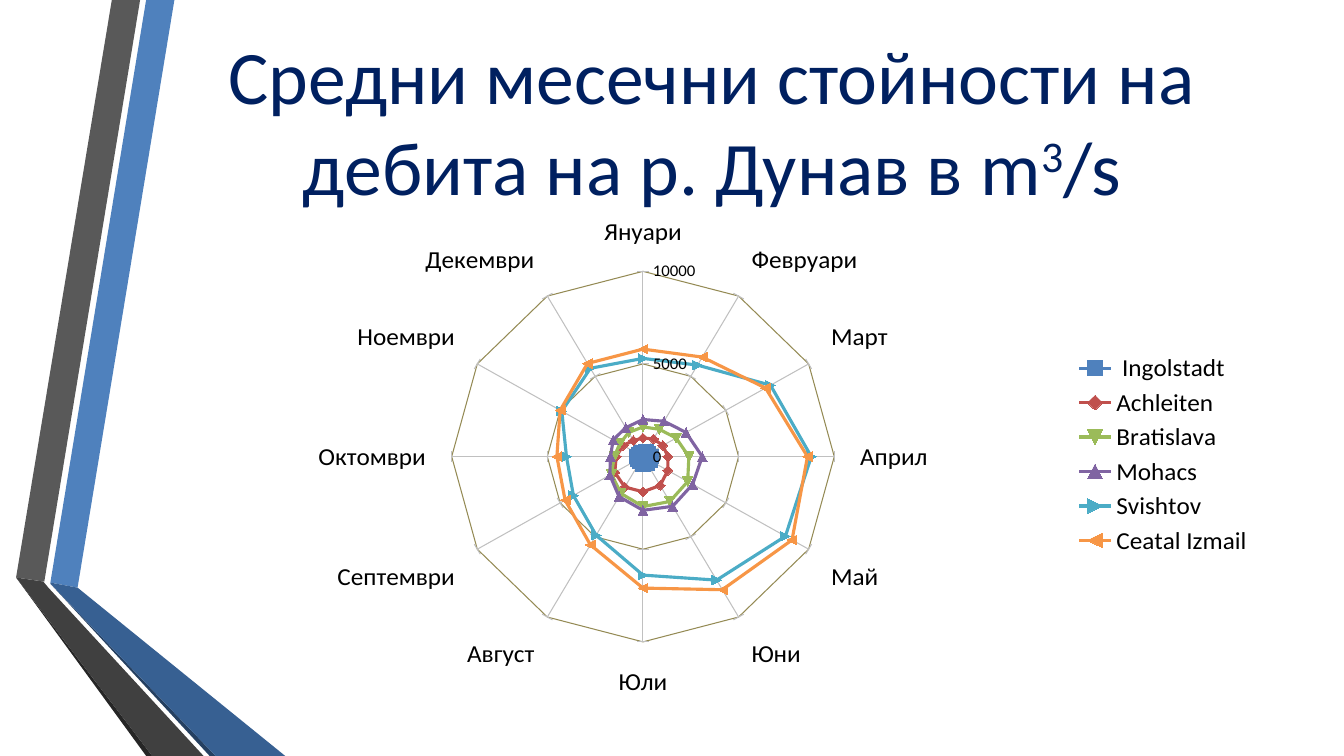
"""Build a slide with a radar chart of monthly mean Danube discharge."""
import pptx
import pptx.chart.data
import pptx.dml.color
import pptx.enum.chart
import pptx.enum.text
import pptx.oxml
import pptx.util
from pptx.util import Inches

RGB = pptx.dml.color.RGBColor
BLUE = RGB(0x4F, 0x81, 0xBD)
GREY = RGB(0x59, 0x59, 0x59)
BLACK_SHADE = RGB(0x26, 0x26, 0x26)
NAVY_SHADE = RGB(0x25, 0x40, 0x61)
DARK_BLUE = RGB(0x37, 0x60, 0x92)
DARK_GREY = RGB(0x40, 0x40, 0x40)
NAVY = RGB(0x00, 0x20, 0x60)
BLACK = RGB(0x00, 0x00, 0x00)
SPOKE_GREY = RGB(0xC0, 0xC0, 0xC0)
OLIVE = RGB(0x94, 0x8A, 0x54)
RED = RGB(0xC0, 0x50, 0x4D)
GREEN = RGB(0x9B, 0xBB, 0x59)
PURPLE = RGB(0x80, 0x64, 0xA2)
TEAL = RGB(0x4B, 0xAC, 0xC6)
ORANGE = RGB(0xF7, 0x96, 0x46)


def set_font(font, size, color):
    font.name = "Calibri"
    font.size = pptx.util.Pt(size)
    font.color.rgb = color


presentation = pptx.Presentation()
presentation.slide_width = Inches(13.33)
presentation.slide_height = Inches(7.5)
slide = presentation.slides.add_slide(presentation.slide_layouts[6])

ribbons = [
    (BLUE, [(0.5, 5.78), (0.77, 5.83), (1.73, 0), (1.45, 0)]),
    (GREY, [(1.39, 0), (1.11, 0), (0.16, 5.73), (0.44, 5.77)]),
    (BLACK_SHADE, [(0.16, 5.73), (1.45, 7.5), (1.51, 7.5)]),
    (NAVY_SHADE, [(0.5, 5.79), (2.08, 7.5), (2.14, 7.5)]),
    (DARK_BLUE, [(0.5, 5.79), (2.14, 7.5), (2.83, 7.5), (0.77, 5.83), (0.5, 5.78)]),
    (DARK_GREY, [(2.02, 7.5), (0.48, 5.83), (0.43, 5.77), (0.16, 5.73), (1.51, 7.5)]),
]
for color, corners in ribbons:
    points = [(Inches(x), Inches(y)) for x, y in corners]
    outline = slide.shapes.build_freeform(*points[0])
    outline.add_line_segments(points[1:], close=True)
    ribbon = outline.convert_to_shape()
    ribbon.fill.solid()
    ribbon.fill.fore_color.rgb = color
    ribbon.line.fill.background()
    ribbon.shadow.inherit = False

title = slide.shapes.add_textbox(Inches(1.58), Inches(0.23), Inches(10.96), Inches(1.92))
title.text_frame.word_wrap = True
title.text_frame.vertical_anchor = pptx.enum.text.MSO_ANCHOR.MIDDLE
heading = title.text_frame.paragraphs[0]
heading.alignment = pptx.enum.text.PP_ALIGN.CENTER
set_font(heading.font, 54, NAVY)
heading.add_run().text = "Средни месечни стойности на дебита на р. Дунав в m"
exponent = heading.add_run()
exponent.text = "3"
exponent.font._element.set("baseline", "30000")
heading.add_run().text = "/s"

months = ["Януари", "Февруари", "Март", "Април", "Май", "Юни", "Юли",
          "Август", "Септември", "Октомври", "Ноември", "Декември"]
stations = [
    (" Ingolstadt", BLUE, 11, [200, 300, 300, 400, 400, 400, 400, 300, 300, 300, 200, 200]),
    ("Achleiten", RED, 7,
     [1000, 1100, 1200, 1300, 1500, 1800, 1900, 1900, 1700, 1400, 1200, 1000]),
    ("Bratislava", GREEN, 7,
     [1600, 1700, 2000, 2400, 2700, 2800, 2700, 2300, 1900, 1500, 1400, 1500]),
    ("Mohacs", PURPLE, 7,
     [2000, 2200, 2600, 3100, 3000, 3100, 2900, 2500, 2000, 1700, 1800, 1800]),
    ("Svishtov", TEAL, 7,
     [5300, 5700, 7700, 8800, 8600, 7700, 6400, 4900, 4200, 4000, 4900, 5500]),
    ("Ceatal Izmail", ORANGE, 7,
     [5800, 6200, 7400, 8600, 9000, 8300, 7100, 5500, 4700, 4500, 5000, 5800]),
]
discharge = pptx.chart.data.CategoryChartData()
discharge.categories = months
for name, color, marker_size, flows in stations:
    discharge.add_series(name, flows)
radar = slide.shapes.add_chart(
    pptx.enum.chart.XL_CHART_TYPE.RADAR_MARKERS,
    Inches(1.03), Inches(2.15), Inches(11.5), Inches(4.76), discharge).chart
set_font(radar.font, 10, BLACK)
radar.has_title = False
radar.has_legend = True
radar.legend.position = pptx.enum.chart.XL_LEGEND_POSITION.RIGHT
radar.legend.include_in_layout = False
set_font(radar.legend.font, 18, BLACK)

for series, (name, color, marker_size, flows) in zip(radar.plots[0].series, stations):
    series.smooth = False
    series.format.line.color.rgb = color
    series.format.line.width = pptx.util.Pt(2.25)
    series.marker.size = marker_size
    series.marker.format.fill.solid()
    series.marker.format.fill.fore_color.rgb = color
    series.marker.format.line.color.rgb = color

month_axis = radar.category_axis
set_font(month_axis.tick_labels.font, 18, BLACK)
month_axis.major_tick_mark = pptx.enum.chart.XL_TICK_MARK.NONE
month_axis.format.line.fill.background()
month_axis.has_major_gridlines = True
month_axis.major_gridlines.format.line.color.rgb = SPOKE_GREY

flow_axis = radar.value_axis
set_font(flow_axis.tick_labels.font, 12, BLACK)
flow_axis.tick_labels.number_format = "0"
flow_axis.tick_labels.number_format_is_linked = False
flow_axis.minimum_scale = 0
flow_axis.maximum_scale = 10000
flow_axis.major_unit = 5000
flow_axis.major_tick_mark = pptx.enum.chart.XL_TICK_MARK.OUTSIDE
flow_axis.format.line.color.rgb = SPOKE_GREY
flow_axis.has_major_gridlines = True
flow_axis.major_gridlines.format.line.color.rgb = OLIVE
flow_axis.major_gridlines.format.line.width = pptx.util.Pt(0.75)

plot_area = radar.plots[0]._element.getparent()
for old_layout in plot_area.findall(pptx.oxml.ns.qn("c:layout")):
    plot_area.remove(old_layout)
plot_area.insert(0, pptx.oxml.parse_xml(
    '<c:layout xmlns:c="http://schemas.openxmlformats.org/drawingml/2006/chart">'
    '<c:manualLayout><c:layoutTarget val="inner"/>'
    '<c:xMode val="edge"/><c:yMode val="edge"/>'
    '<c:x val="0.3"/><c:y val="0.1"/><c:w val="0.33"/><c:h val="0.81"/>'
    '</c:manualLayout></c:layout>'))

presentation.save("out.pptx")
